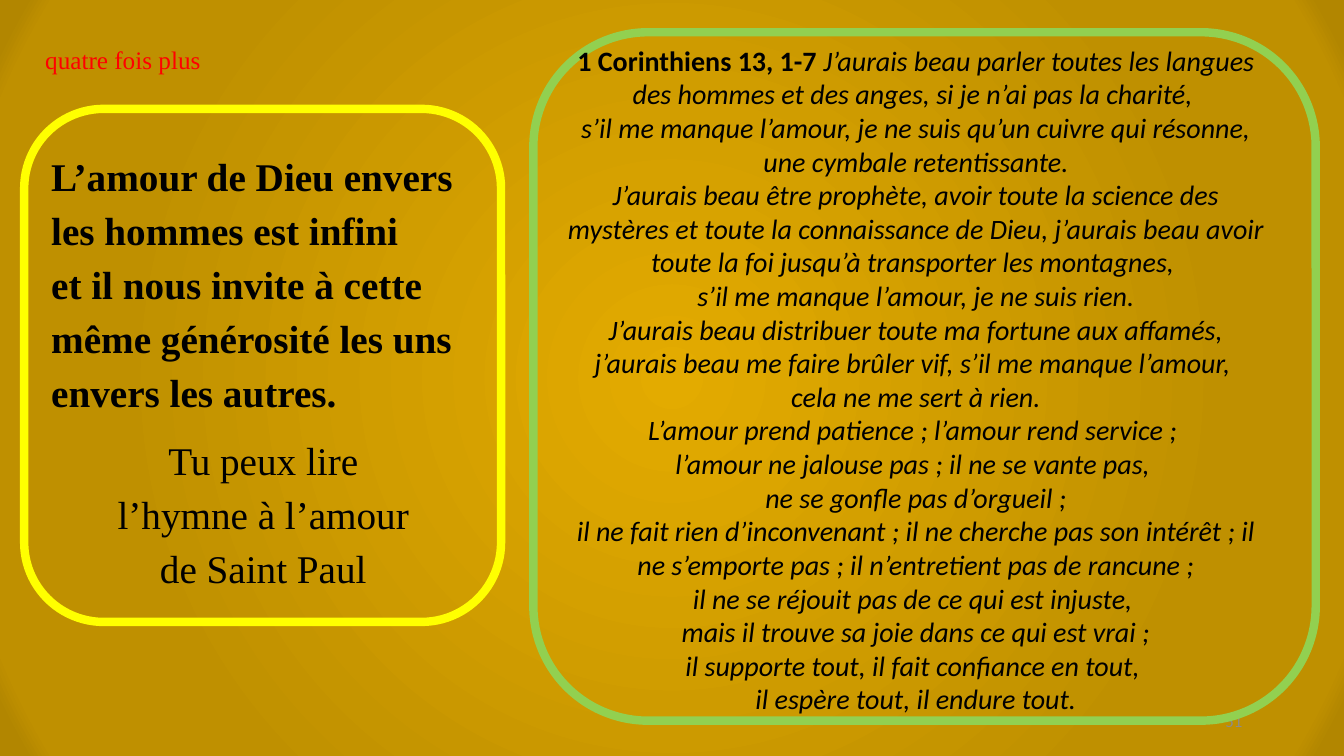
from lxml import etree
from pptx import Presentation
from pptx.dml.color import RGBColor
from pptx.enum.shapes import MSO_SHAPE
from pptx.enum.text import MSO_ANCHOR, MSO_AUTO_SIZE, PP_ALIGN
from pptx.oxml.ns import qn
from pptx.util import Inches, Pt

ROUND = MSO_SHAPE.ROUNDED_RECTANGLE
MIDDLE = MSO_ANCHOR.MIDDLE
GROW = MSO_AUTO_SIZE.SHAPE_TO_FIT_TEXT
LEFT, CENTER, RIGHT = PP_ALIGN.LEFT, PP_ALIGN.CENTER, PP_ALIGN.RIGHT

COLORS = {
    "black": "000000", "red": "FF0000", "yellow": "FFFF00",
    "green": "92D050", "gray": "8C8C8C",
    "light": "E3AB00", "gold": "BF9000", "dark": "B28600",
}
SERIF, SANS = "Times New Roman", "Calibri"

# position %, colour, opacity %
STOPS = [(0, "light", 100), (73, "gold", 36), (94, "gold", 100), (97, "dark", 100)]

LOVE = ("L’amour de Dieu envers les hommes est infini \n"
        "et il nous invite à cette même générosité les uns envers les autres.")
INVITE = "Tu peux lire \nl’hymne à l’amour \nde Saint Paul "

VERSE = "1 Corinthiens 13, 1-7 "
HYMN = [
    "J’aurais beau parler toutes les langues des hommes et des anges, "
    "si je n’ai pas la charité, ",
    "s’il me manque l’amour, je ne suis qu’un cuivre qui résonne, "
    "une cymbale retentissante.",
    "J’aurais beau être prophète, avoir toute la science des mystères et toute "
    "la connaissance de Dieu, j’aurais beau avoir toute la foi jusqu’à "
    "transporter les montagnes, ",
    "s’il me manque l’amour, je ne suis rien.",
    "J’aurais beau distribuer toute ma fortune aux affamés, j’aurais beau me "
    "faire brûler vif, s’il me manque l’amour, ",
    "cela ne me sert à rien.",
    "L’amour prend patience ; l’amour rend service ; ",
    "l’amour ne jalouse pas ; il ne se vante pas, ",
    "ne se gonfle pas d’orgueil ;",
    "il ne fait rien d’inconvenant ; il ne cherche pas son intérêt ; "
    "il ne s’emporte pas ; il n’entretient pas de rancune ;",
    "il ne se réjouit pas de ce qui est injuste, ",
    "mais il trouve sa joie dans ce qui est vrai ;",
    "il supporte tout, il fait confiance en tout, ",
    "il espère tout, il endure tout.",
]


def rgb(name):
    return RGBColor.from_string(COLORS[name])


def paint_back(slide):
    """Fill the background with a radial gradient."""
    slide.background.fill.gradient()
    grad = slide.element.find(".//" + qn("a:gradFill"))
    for child in list(grad):
        grad.remove(child)
    stops = etree.SubElement(grad, qn("a:gsLst"))
    for pos, name, alpha in STOPS:
        stop = etree.SubElement(stops, qn("a:gs"), pos=str(pos * 1000))
        color = etree.SubElement(stop, qn("a:srgbClr"), val=COLORS[name])
        if alpha < 100:
            etree.SubElement(color, qn("a:alpha"), val=str(alpha * 1000))
    way = etree.SubElement(grad, qn("a:path"), path="circle")
    etree.SubElement(way, qn("a:fillToRect"),
                     {side: "50000" for side in "ltrb"})


def add_frame(group, box, color):
    frame = group.shapes.add_shape(ROUND, *map(Inches, box))
    frame.shadow.inherit = False
    frame.fill.background()
    frame.line.color.rgb = rgb(color)
    frame.line.width = Pt(6)


def add_box(parent, box):
    frame = parent.shapes.add_textbox(*map(Inches, box)).text_frame
    frame.word_wrap = True
    frame.auto_size = GROW
    return frame


def set_font(font, face, size, color="black"):
    font.name, font.size = face, Pt(size)
    font.color.rgb = rgb(color)


def add_label(slide, box, text, face, size, color, align):
    frame = add_box(slide, box)
    para = frame.paragraphs[0]
    para.text, para.alignment = text, align
    set_font(para.font, face, size, color)
    return frame


def next_para(frame, index):
    return frame.add_paragraph() if index else frame.paragraphs[0]


def add_message(slide):
    group = slide.shapes.add_group_shape()
    add_frame(group, (0.24, 1.08, 4.73, 5.09), "yellow")
    frame = add_box(group, (0.41, 1.39, 4.5, 4.53))
    parts = [(LOVE, LEFT, True), (INVITE, CENTER, False)]
    for index, (text, align, bold) in enumerate(parts):
        para = next_para(frame, index)
        para.text, para.alignment = text, align
        para.line_spacing, para.space_after = 1.15, Pt(10)
        set_font(para.font, SERIF, 28)
        para.font.bold = bold


def add_hymn(slide):
    group = slide.shapes.add_group_shape()
    add_frame(group, (5.29, 0.32, 7.76, 6.83), "green")
    frame = add_box(group, (5.53, 0.38, 7.11, 6.83))
    for index, text in enumerate(HYMN):
        para = next_para(frame, index)
        para.alignment = CENTER
        set_font(para.font, SANS, 20)
        if index == 0:
            verse = para.add_run()
            verse.text, verse.font.bold = VERSE, True
        line = para.add_run()
        line.text, line.font.italic = text, True


def main():
    deck = Presentation()
    deck.slide_width, deck.slide_height = Inches(13.33), Inches(7.5)
    slide = deck.slides.add_slide(deck.slide_layouts[6])
    paint_back(slide)
    number = add_label(slide, (9.42, 6.95, 3, 0.4), "51", SANS, 12, "gray", RIGHT)
    number.auto_size = MSO_AUTO_SIZE.NONE
    number.vertical_anchor = MIDDLE
    add_label(slide, (0.35, 0.39, 1.86, 0.4), "quatre fois plus",
              SERIF, 18, "red", LEFT)
    add_message(slide)
    add_hymn(slide)
    deck.save("out.pptx")


if __name__ == "__main__":
    main()
